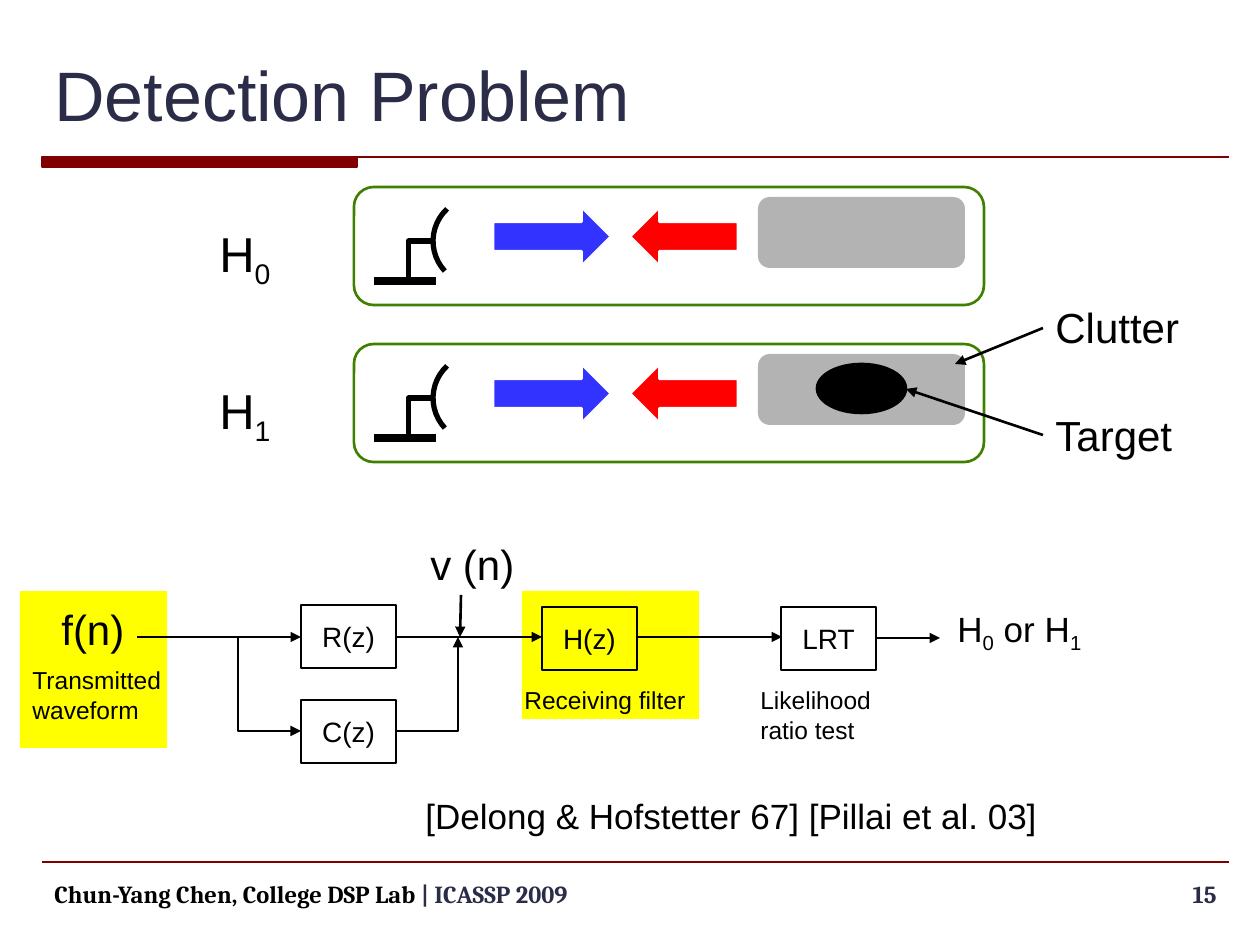
from dataclasses import dataclass

from lxml import etree
from pptx import Presentation
from pptx.dml.color import RGBColor
from pptx.enum.shapes import MSO_CONNECTOR, MSO_SHAPE
from pptx.enum.text import MSO_ANCHOR, MSO_AUTO_SIZE, PP_ALIGN
from pptx.oxml.ns import qn
from pptx.util import Pt

RECT, ROUND, OVAL = MSO_SHAPE.RECTANGLE, MSO_SHAPE.ROUNDED_RECTANGLE, MSO_SHAPE.OVAL
ARC, ARROW = MSO_SHAPE.ARC, MSO_SHAPE.RIGHT_ARROW
STRAIGHT, ELBOW = MSO_CONNECTOR.STRAIGHT, MSO_CONNECTOR.ELBOW
LEFT, CENTER, RIGHT = PP_ALIGN.LEFT, PP_ALIGN.CENTER, PP_ALIGN.RIGHT
TOP, MIDDLE = MSO_ANCHOR.TOP, MSO_ANCHOR.MIDDLE
FIT, NO_FIT = MSO_AUTO_SIZE.SHAPE_TO_FIT_TEXT, MSO_AUTO_SIZE.NONE
EMU_PER_PX = 914400 / 126


@dataclass(frozen=True)
class Theme:
    font: str = "Arial"
    footer_font: str = "Cambria"
    ink: str = "000000"
    paper: str = "FFFFFF"
    title: str = "2B2C47"
    rule: str = "800000"
    frame: str = "408000"
    clutter: str = "B3B3B3"
    sent: str = "3333FF"
    echo: str = "FF0000"
    mark: str = "FFFF00"
    title_size: int = 40
    hypothesis_size: int = 28
    label_size: int = 24
    body_size: int = 20
    block_size: int = 16
    note_size: int = 14


T = Theme()


def px(n):
    return round(n * EMU_PER_PX)


def rgb(color):
    return RGBColor.from_string(color)


def add_runs(p, runs, size, color=T.ink, font=T.font, bold=False):
    """Each run is a string, or a pair of string and differing format."""
    for item in runs:
        text, extra = (item, {}) if isinstance(item, str) else item
        r = p.add_run()
        r.text = text
        r.font.color.rgb = rgb(extra.get("color", color))
        for name, value in {"size": Pt(size), "name": font, "bold": bold}.items():
            setattr(r.font, name, value)
        if "baseline" in extra:
            r.font._element.set("baseline", str(extra["baseline"]))


def sub(text):
    return text, {"baseline": -25000}


def add_text(s, box, lines, size, align=LEFT, anchor=TOP, wrap=False, **style):
    tf = s.shapes.add_textbox(*map(px, box)).text_frame
    settings = {"word_wrap": wrap, "vertical_anchor": anchor,
                "auto_size": NO_FIT if wrap else FIT}
    for name, value in settings.items():
        setattr(tf, name, value)
    for i, runs in enumerate(lines):
        p = tf.paragraphs[0] if i == 0 else tf.add_paragraph()
        p.alignment = align
        add_runs(p, runs, size, **style)


def add_shape(s, kind, box, fill=None, line=None, width=1.5):
    sp = s.shapes.add_shape(kind, *map(px, box))
    sp.shadow.inherit = False
    if fill:
        sp.fill.solid()
        sp.fill.fore_color.rgb = rgb(fill)
    else:
        sp.fill.background()
    if line:
        sp.line.color.rgb = rgb(line)
        sp.line.width = Pt(width)
    else:
        sp.line.fill.background()
    return sp


def add_line(s, start, end, width=1.5, color=T.ink, kind=STRAIGHT, arrow=None, preset=None):
    """arrow is None, "headEnd" (at the start) or "tailEnd" (at the end)."""
    c = s.shapes.add_connector(kind, *map(px, start + end))
    c.line.color.rgb = rgb(color)
    c.line.width = Pt(width)
    sp_pr = c._element.spPr
    if preset:
        sp_pr.find(qn("a:prstGeom")).set("prst", preset)
    if arrow:
        etree.SubElement(sp_pr.find(qn("a:ln")), qn("a:" + arrow), type="triangle")
    etree.SubElement(sp_pr, qn("a:effectLst"))


def add_frame(s, x, y, w, h):
    # Title and its rule
    add_line(s, (x, y + 126), (x + w, y + 126), color=T.rule)
    add_shape(s, RECT, (x, y + 126, 315, 10), T.rule, T.rule, 0.75)
    add_text(s, (x, y, w, 126), [["Detection Problem"]], T.title_size,
             anchor=MIDDLE, wrap=True, color=T.title)
    # Footer
    add_line(s, (x, y + h), (x + w, y + h), 0.75, T.rule)
    style = {"font": T.footer_font, "bold": True, "wrap": True}
    credit = ["Chun-Yang Chen, College DSP Lab ", ("| ICASSP 2009", {"color": T.title})]
    add_text(s, (x, y + h + 11, 1045, 37), [credit], T.note_size, **style)
    add_text(s, (x + w - 132, y + h + 11, 132, 37), [["15"]], T.note_size,
             align=RIGHT, color=T.title, **style)


def add_scene(s, x, y, w, h, index, has_target):
    add_text(s, (x - 147, y + 30, 79, 72), [["H", sub(index)]], T.hypothesis_size)
    add_shape(s, ROUND, (x + 404, y + 10, 207, 71), T.clutter)
    # Antenna
    add_line(s, (x + 79, y + 54), (x + 30, y + 93), 3, kind=ELBOW)
    dish = add_shape(s, ARC, (x + 79, y + 10, 88, 88), T.paper, T.ink, 3)
    dish.rotation = 227.1
    add_line(s, (x + 20, y + 94), (x + 82, y + 94), 4.5)
    # Sent and returned waves
    add_shape(s, ARROW, (x + 139, y + 20, 118, 59), T.sent, T.paper)
    echo = add_shape(s, ARROW, (x + 276, y + 20, 108, 59), T.echo, T.paper)
    echo._element.spPr.find(qn("a:xfrm")).set("flipH", "1")
    if has_target:
        add_shape(s, OVAL, (x + 463, y + 20, 89, 49), T.ink, T.ink)
    add_shape(s, ROUND, (x, y, w, h), line=T.frame)


def add_callouts(s, x, y):
    for text, top, width, start, tip in (
            ("Clutter", 0, 150, 33, (-88, 69)),
            ("Target", 108, 144, 140, (-137, 94))):
        add_text(s, (x, y + top, width, 64), [[text]], T.label_size)
        add_line(s, (x, y + start), (x + tip[0], y + tip[1]), arrow="tailEnd")


def add_block(s, x, y, name, fill=T.paper):
    sp = add_shape(s, RECT, (x, y, 95, 63), fill, T.ink)
    tf = sp.text_frame
    tf.vertical_anchor = MIDDLE
    tf.paragraphs[0].alignment = CENTER
    add_runs(tf.paragraphs[0], [name], T.block_size)


def add_signal_chain(s, x, y):
    # Highlights of the two designed parts
    add_shape(s, RECT, (x, y + 59, 147, 157), T.mark)
    add_shape(s, RECT, (x + 502, y + 59, 177, 128), T.mark)
    # Blocks
    for name, left, top, fill in (("R(z)", 281, 73, T.paper), ("C(z)", 281, 168, T.paper),
                                  ("H(z)", 522, 75, T.mark), ("LRT", 761, 75, T.paper)):
        add_block(s, x + left, y + top, name, fill)
    # Signal flow
    for x1, y1, x2, y2 in ((117, 105, 281, 105), (376, 105, 522, 105), (441, 63, 440, 105),
                           (616, 105, 762, 105), (856, 106, 920, 106)):
        add_line(s, (x + x1, y + y1), (x + x2, y + y2), arrow="tailEnd")
    for x1, x2, arrow in ((281, 218, "headEnd"), (376, 438, "tailEnd")):
        add_line(s, (x + x1, y + 199), (x + x2, y + 105), kind=ELBOW,
                 arrow=arrow, preset="bentConnector2")
    # Signal names and notes
    for left, top, w, h, lines, size in (
            (398, 0, 126, 64, [["v (n)"]], T.label_size),
            (29, 65, 89, 64, [["f(n)"]], T.label_size),
            (0, 127, 155, 72, [["Transmitted"], ["waveform"]], T.note_size),
            (492, 147, 188, 43, [["Receiving filter"]], T.note_size),
            (925, 69, 154, 55, [["H", sub("0"), " or H", sub("1")]], T.body_size)):
        add_text(s, (x + left, y + top, w, h), lines, size)
    add_text(s, (x + 728, y + 147, 178, 72), [["Likelihood ratio test"]], T.note_size, wrap=True)


def main():
    prs = Presentation()
    prs.slide_width, prs.slide_height = px(1260), px(945)
    s = prs.slides.add_slide(prs.slide_layouts[6])
    add_frame(s, 42, 31, 1187, 831)
    for i in range(2):
        add_scene(s, 354, 187 + 157 * i, 630, 118, str(i), has_target=i == 1)
    add_callouts(s, 1043, 295)
    add_signal_chain(s, 20, 532)
    add_text(s, (413, 788, 641, 55), [["[Delong & Hofstetter 67] [Pillai et al. 03]"]], T.body_size)
    prs.save("out.pptx")


if __name__ == "__main__":
    main()
